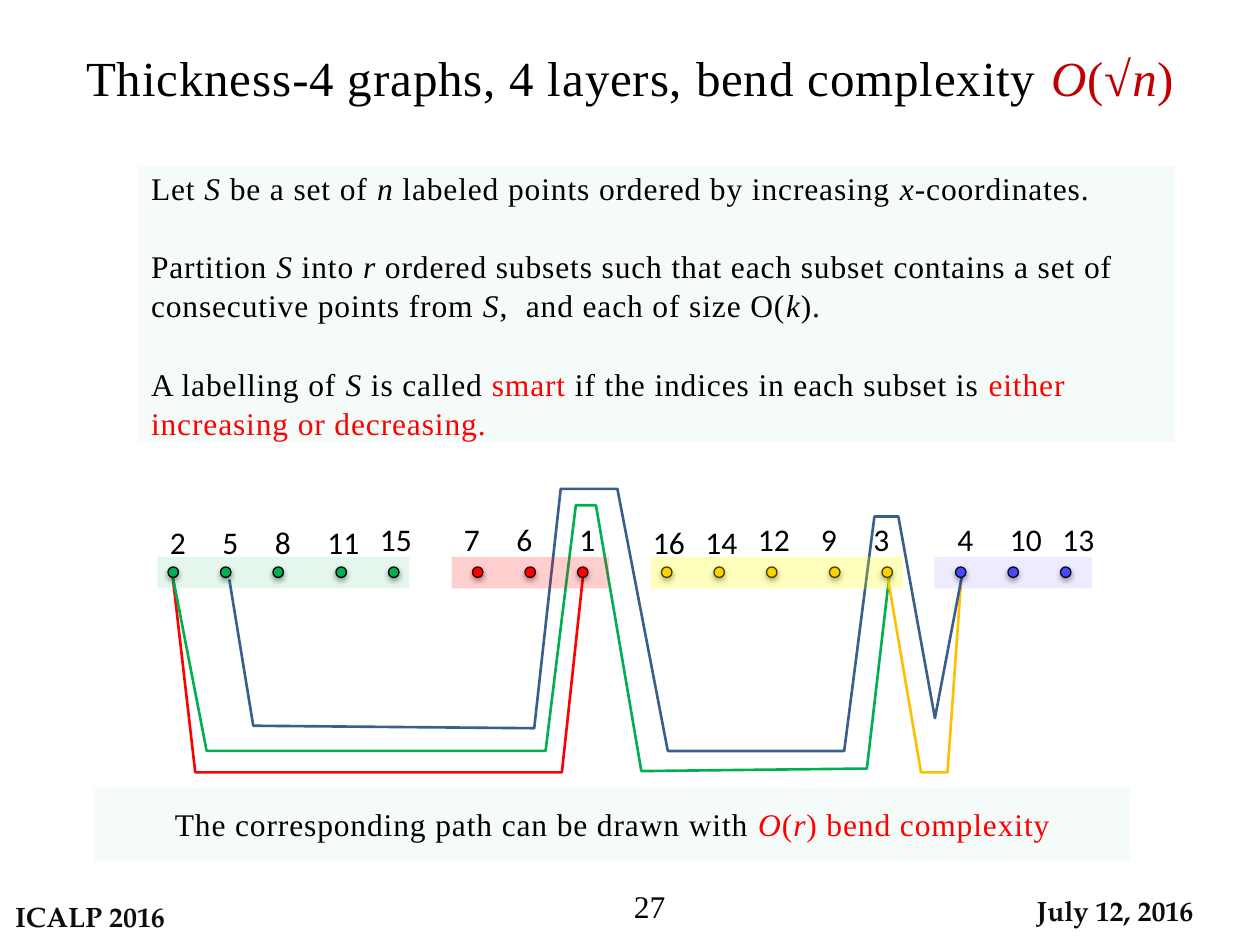
from lxml.etree import SubElement
from pptx import Presentation
from pptx.dml.color import RGBColor
from pptx.enum.shapes import MSO_SHAPE as SHAPE
from pptx.enum.text import MSO_ANCHOR as ANCHOR, PP_ALIGN as ALIGN
from pptx.oxml.ns import qn
from pptx.util import Inches, Pt

BLACK = RGBColor(0x00, 0x00, 0x00)
INK = RGBColor(0x0D, 0x0D, 0x0D)
RED = RGBColor(0xFF, 0x00, 0x00)
DARK_RED = RGBColor(0xC0, 0x00, 0x00)
GREEN = RGBColor(0x00, 0xB0, 0x50)
GOLD = RGBColor(0xFF, 0xC0, 0x00)
YELLOW = RGBColor(0xFF, 0xFF, 0x00)
VIOLET = RGBColor(0x47, 0x47, 0xFB)
BLUE = RGBColor(0x3A, 0x5F, 0x8C)
SERIF, SANS, FOOTER = "Times New Roman", "Calibri", "TeX Gyre Pagella"

# In texts, _ switches italics and | switches the accent colour.
TITLE = "Thickness_-_4 graphs, 4 layers, bend complexity |_O_(√_n_)"
DEFINITIONS = [
    "Let _S_ be a set of _n_ labeled points ordered by increasing _x_-coordinates.",
    "Partition _S _into _r_ ordered subsets such that each subset contains a set of "
    "consecutive points from _S_,  and each of size O(_k_).",
    "A labelling of _S_ is called |smart| if the indices in each subset is "
    "|either increasing or decreasing.",
]
CONCLUSION = "The corresponding path can be drawn with |_O_(_r_) bend complexity"

# Columns are twelfths of an inch.
# Subset: dot colour, band colour, band opacity %, band column, band width,
# points as (label, dot column, label column)
SUBSETS = [
    (GREEN, GREEN, 10, 15, 24,
     [(2, 16, 15), (5, 21, 20), (8, 26, 25), (11, 32, 30), (15, 37, 35)]),
    (RED, RED, 19, 43, 15, [(7, 45, 43), (6, 50, 48), (1, 55, 54)]),
    (GOLD, YELLOW, 26, 62, 24,
     [(16, 63, 61), (14, 68, 66), (12, 73, 71), (9, 79, 77), (3, 84, 82)]),
    (VIOLET, VIOLET, 10, 89, 15, [(4, 91, 90), (10, 96, 95), (13, 101, 100)]),
]
LOWER_LABELS = {2, 5, 8, 11, 16, 14}
BAND_TOP, BAND_HEIGHT, DOT_TOP, DOT_SIZE = 4.42, 0.25, 4.5, 1 / 12

PATHS = [
    (RED, [(1.37, 4.57), (1.55, 6.13), (4.46, 6.13), (4.63, 4.55)]),
    (GREEN, [(1.37, 4.57), (1.64, 5.96), (4.33, 5.96), (4.57, 4.01),
             (4.73, 4.01), (5.09, 6.12), (6.88, 6.1), (7.06, 4.55)]),
    (GOLD, [(7.04, 4.55), (7.31, 6.13), (7.52, 6.13), (7.63, 4.57)]),
    (BLUE, [(7.64, 4.54), (7.42, 5.7), (7.13, 4.1), (6.94, 4.1), (6.7, 5.96),
            (5.3, 5.96), (4.9, 3.88), (4.45, 3.88), (4.24, 5.78),
            (2.01, 5.76), (1.82, 4.6)]),
]

prs = Presentation()
prs.slide_width, prs.slide_height = Inches(10), Inches(7.5)
slide = prs.slides.add_slide(prs.slide_layouts[6])


def write(s, paragraphs, font=SERIF, size=18, color=BLACK, accent=RED, bold=False,
          align=ALIGN.LEFT, anchor=ANCHOR.MIDDLE, wrap=True, spacing=None):
    """Fill a shape with marked-up paragraphs; spacing is between letters, in points."""
    tf = s.text_frame
    tf.word_wrap, tf.vertical_anchor = wrap, anchor
    for i, text in enumerate(paragraphs):
        p = tf.add_paragraph() if i else tf.paragraphs[0]
        p.alignment = align
        if len(paragraphs) > 1:
            p.line_spacing = 1.05
            p.space_before = Pt(22 if i else 0)
        for j, part in enumerate(text.split("|")):
            for k, words in enumerate(part.split("_")):
                if not words:
                    continue
                r = p.add_run()
                r.text = words
                style = dict(name=font, size=Pt(size), bold=bold, italic=k % 2 == 1)
                for name, value in style.items():
                    setattr(r.font, name, value)
                r.font.color.rgb = accent if j % 2 else color
                if spacing:
                    r.font._element.set("spc", str(round(spacing * 100)))


def text_box(x, y, w, h, text, **style):
    write(slide.shapes.add_textbox(*map(Inches, (x, y, w, h))), [text], **style)


def add_shape(kind, x, y, w, h, fill=None, opacity=100):
    s = slide.shapes.add_shape(kind, *map(Inches, (x, y, w, h)))
    s.shadow.inherit = False
    s.line.fill.background()
    if fill is None:
        s.fill.background()
    else:
        s.fill.solid()
        s.fill.fore_color.rgb = fill
        if opacity < 100:
            clr = s._element.spPr.find(qn("a:solidFill"))[0]
            SubElement(clr, qn("a:alpha"), val=str(opacity * 1000))
    return s


def add_path(color, points):
    start, *rest = [tuple(map(Inches, pt)) for pt in points]
    builder = slide.shapes.build_freeform(*start)
    builder.add_line_segments(rest, close=False)
    s = builder.convert_to_shape()
    s.shadow.inherit = False
    s.fill.background()
    s.line.color.rgb, s.line.width = color, Pt(1.5)


def add_dot(column, color):
    s = add_shape(SHAPE.OVAL, column / 12, DOT_TOP, DOT_SIZE, DOT_SIZE, color)
    s.line.color.rgb, s.line.width = BLACK, Pt(0.75)
    effects = s._element.spPr.find(qn("a:effectLst"))
    shadow = SubElement(effects, qn("a:outerShdw"), blurRad=str(Pt(3.1)),
                        dist=str(Pt(1.6)), dir="5400000", rotWithShape="0")
    clr = SubElement(shadow, qn("a:srgbClr"), val=str(BLACK))
    SubElement(clr, qn("a:alpha"), val="38000")


def add_band(subset):
    _, color, opacity, column, width, _ = subset
    add_shape(SHAPE.RECTANGLE, column / 12, BAND_TOP, width / 12, BAND_HEIGHT,
              color, opacity)


text_box(3.05, 6.99, 2.33, 0.4, "27", align=ALIGN.RIGHT)
text_box(0, 0.33, 10, 0.57, TITLE, size=28, accent=DARK_RED, align=ALIGN.CENTER,
         anchor=ANCHOR.TOP, spacing=0.5)
for x, y, h, paragraphs, align in [(0.75, 6.25, 0.58, [CONCLUSION], ALIGN.CENTER),
                                   (1.1, 1.32, 2.19, DEFINITIONS, ALIGN.LEFT)]:
    panel = add_shape(SHAPE.RECTANGLE, x, y, 8.22, h, GREEN, 4)
    write(panel, paragraphs, align=align, spacing=0.5)

for color, points in PATHS:
    add_path(color, points)

# The first band lies under the dots, the others tint them.
add_band(SUBSETS[0])
for dot_color, *_, points in SUBSETS:
    for _, column, _ in points:
        add_dot(column, dot_color)
for subset in SUBSETS[1:]:
    add_band(subset)
for *_, points in SUBSETS:
    for label, _, column in points:
        text_box(column / 12, 4.1 if label in LOWER_LABELS else 4.08,
                 0.46 if label > 9 else 0.33, 0.4, str(label),
                 font=SANS, anchor=ANCHOR.TOP, wrap=False)

for x, w, h, text, align in [(0, 5.5, 0.45, "ICALP 2016", ALIGN.LEFT),
                             (7.7, 2.3, 0.35, "July 12, 2016", ALIGN.CENTER)]:
    write(add_shape(SHAPE.ROUNDED_RECTANGLE, x, 7.05, w, h), [text],
          font=FOOTER, size=16, color=INK, bold=True, align=align)

prs.save("out.pptx")
